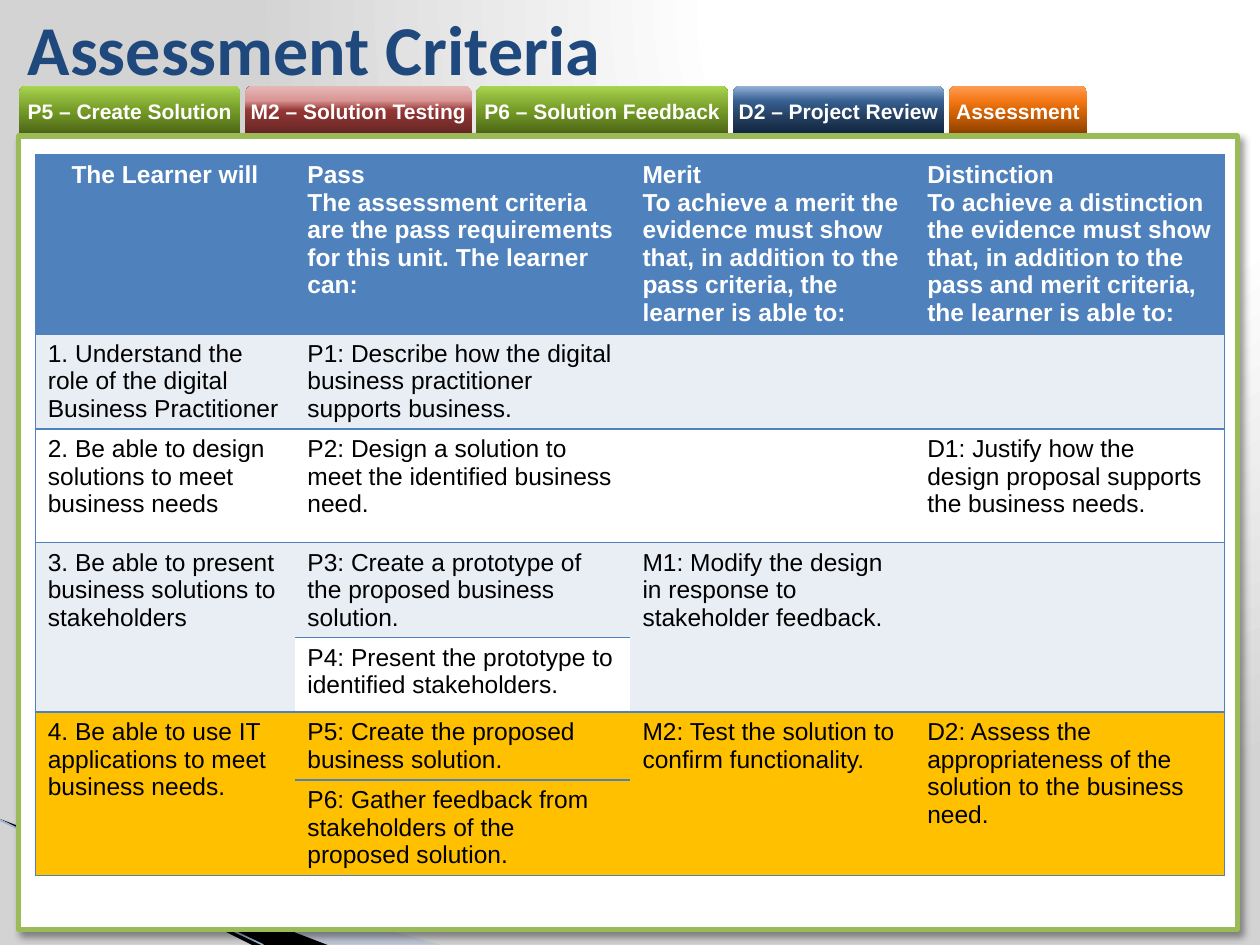
from dataclasses import dataclass

from lxml.etree import SubElement
from pptx import Presentation
from pptx.dml.color import RGBColor
from pptx.enum.shapes import MSO_CONNECTOR, MSO_SHAPE
from pptx.enum.text import MSO_ANCHOR, MSO_AUTO_SIZE, PP_ALIGN
from pptx.oxml.ns import qn
from pptx.util import Inches, Pt

UNIT = Inches(0.1)  # the slide is a grid of 100 columns by 75 rows
NO_STYLE = "{2D5ABB26-0587-4C30-8999-92F81FD0307C}"


@dataclass(frozen=True)
class Theme:
    title_font: str = "Calibri"
    body_font: str = "Arial"
    title_size: float = 40
    tab_size: float = 12
    table_size: float = 14
    title: str = "1F497D"
    white: str = "FFFFFF"
    black: str = "000000"
    frame: str = "9BBB59"
    header: str = "4F81BD"
    band: str = "E9EDF4"
    current: str = "FFC000"
    ribbon: str = "A7B9DB"
    ribbon_line: str = "9EB3D6"
    backdrop: tuple = ((0, "FFFFFF"), (40, "FFFFFF"), (100, "D3D3D3"))
    green: tuple = ((0, "4A6316"), (50, "769C27"), (70, "89B137"), (100, "A9D651"))
    red: tuple = ((0, "632523"), (50, "953735"), (70, "D99694"), (100, "E6B9B8"))
    blue: tuple = ((0, "0F243E"), (38, "254061"), (69, "376092"), (100, "95B3D7"))
    orange: tuple = ((0, "8B3F00"), (50, "DA6606"), (70, "F47917"), (100, "FF9C54"))


def grid(*lengths):
    return [round(length * UNIT) for length in lengths]


def add_element(parent, tag, **attributes):
    return SubElement(parent, qn(tag), {key: str(value) for key, value in attributes.items()})


def add_color(parent, color, alpha=None):
    node = add_element(parent, "a:srgbClr", val=color)
    if alpha is not None:
        add_element(node, "a:alpha", val=alpha * 1000)


def write_text(frame, text, *, font, size, color, bold=False, align=PP_ALIGN.LEFT):
    """Fill a text frame; each line of the text is a paragraph."""
    frame.text = text
    for para in frame.paragraphs:
        para.alignment = align
        for span in para.runs:
            span.font.name, span.font.size, span.font.bold = font, Pt(size), bold
            span.font.color.rgb = RGBColor.from_string(color)


def set_gradient(fill, owner, stops, center=None):
    """Gradient running upwards, or circular around the given edges."""
    fill.gradient()
    node = next(owner.iter(qn("a:gradFill")))
    for child in list(node):
        node.remove(child)
    stop_list = add_element(node, "a:gsLst")
    for place, color in stops:
        add_color(add_element(stop_list, "a:gs", pos=place * 1000), color)
    if center:
        circle = add_element(node, "a:path", path="circle")
        add_element(circle, "a:fillToRect", **{edge: share * 1000 for edge, share in center.items()})
    else:
        add_element(node, "a:lin", ang=270 * 60000, scaled=0)


class Slide:
    def __init__(self, deck, theme):
        self.theme = theme
        self.page = deck.slides.add_slide(deck.slide_layouts[5])
        self.shapes = self.page.shapes

    def background(self, stops, **center):
        set_gradient(self.page.background.fill, self.page.element, stops, center)

    def title(self, text, *area):
        box = self.shapes.title
        box.left, box.top, box.width, box.height = grid(*area)
        box.text_frame.auto_size = MSO_AUTO_SIZE.NONE
        box.text_frame.vertical_anchor = MSO_ANCHOR.MIDDLE
        write_text(box.text_frame, text, font=self.theme.title_font,
                   size=self.theme.title_size, color=self.theme.title, bold=True)

    def ribbon(self, points, color, alpha=None):
        start, *rest = points
        builder = self.shapes.build_freeform(*start, scale=UNIT)
        builder.add_line_segments(rest, close=True)
        shape = builder.convert_to_shape()
        shape.shadow.inherit = False
        shape.line.fill.background()
        shape.fill.solid()
        shape.fill.fore_color.rgb = RGBColor.from_string(color)
        if alpha is not None:
            add_element(next(shape.element.iter(qn("a:srgbClr"))), "a:alpha", val=alpha * 1000)

    def line(self, ends, color, width):
        line = self.shapes.add_connector(MSO_CONNECTOR.STRAIGHT, *grid(*ends))
        line.line.color.rgb = RGBColor.from_string(color)
        line.line.width = Pt(width)
        add_element(line.element.spPr, "a:effectLst")

    def tab(self, text, stops, *area):
        box = self.shapes.add_shape(MSO_SHAPE.ROUND_2_SAME_RECTANGLE, *grid(*area))
        box.shadow.inherit = False
        box.line.fill.background()
        set_gradient(box.fill, box.element.spPr, stops)
        frame = box.text_frame
        frame.margin_left = frame.margin_right = frame.margin_top = frame.margin_bottom = 0
        frame.vertical_anchor = MSO_ANCHOR.MIDDLE
        write_text(frame, text, font=self.theme.body_font, size=self.theme.tab_size,
                   color=self.theme.white, bold=True, align=PP_ALIGN.CENTER)

    def panel(self, *area):
        box = self.shapes.add_shape(MSO_SHAPE.RECTANGLE, *grid(*area))
        box.fill.solid()
        box.fill.fore_color.rgb = RGBColor.from_string(self.theme.white)
        box.line.color.rgb = RGBColor.from_string(self.theme.frame)
        box.line.width = Pt(3)
        box.shadow.inherit = False
        effects = box.element.spPr.find(qn("a:effectLst"))
        shadow = add_element(effects, "a:outerShdw", blurRad=Pt(4), dist=Pt(3),
                             dir=45 * 60000, algn="tl", rotWithShape=0)
        add_color(shadow, self.theme.black, 40)

    def table(self, left, top, columns, heights, rows, fills, merges):
        theme = self.theme
        area = grid(left, top, sum(columns), sum(heights))
        table = self.shapes.add_table(len(rows), len(columns), *area).table
        next(table._tbl.iter(qn("a:tableStyleId"))).text = NO_STYLE
        table.first_row = table.horz_banding = False
        for column, width in zip(table.columns, grid(*columns)):
            column.width = width
        for row, height in zip(table.rows, grid(*heights)):
            row.height = height
        for first, last, column in merges:
            table.cell(first, column).merge(table.cell(last, column))
        for r, row in enumerate(rows):
            for c, text in enumerate(row):
                cell = table.cell(r, c)
                sides = ["a:lnL"] * (c == 0) + ["a:lnR"] * (c == len(columns) - 1)
                sides += ["a:lnT"] * (not cell.is_spanned) + ["a:lnB"]
                for side in sides:
                    border = add_element(cell._tc.get_or_add_tcPr(), side, w=Pt(1))
                    add_color(add_element(border, "a:solidFill"), theme.header)
                cell.fill.solid()
                cell.fill.fore_color.rgb = RGBColor.from_string(
                    theme.white if (r, c) == (4, 1) else fills[r])
                if text:
                    write_text(cell.text_frame, text, font=theme.body_font, size=theme.table_size,
                               color=theme.black if r else theme.white, bold=r == 0,
                               align=PP_ALIGN.LEFT if r or c else PP_ALIGN.CENTER)


def main():
    theme = Theme()
    deck = Presentation()
    deck.slide_width, deck.slide_height = grid(100, 75)
    slide = Slide(deck, theme)

    # Backdrop with ribbons in the bottom left corner
    slide.background(theme.backdrop, l=65, t=0, r=0, b=98)
    slide.ribbon([(0, 65), (34.9, 75), (25.9, 75), (0, 64.9)], theme.ribbon, 40)
    slide.ribbon([(0, 64.8), (25.6, 74.9), (20.2, 75), (0.1, 64.9)], theme.black)
    slide.line((0, 65.1, 20.9, 75), theme.ribbon_line, 0.95)

    # Section tabs, set side by side with an equal gap
    tabs = [("Assessment", 11, theme.orange)]
    tabs = [
        ("P5 – Create Solution", 17.6, theme.green),
        ("M2 – Solution Testing", 18, theme.red),
        ("P6 – Solution Feedback", 20, theme.green),
        ("D2 – Project Review", 16.8, theme.blue),
    ] + tabs
    left = 1.5
    for text, width, stops in tabs:
        slide.tab(text, stops, left, 6.8, width, 3.9)
        left += width + 0.35

    slide.panel(1.5, 10.8, 96.7, 63)
    slide.title("Assessment Criteria", 1.2, 0, 84.3, 7.6)

    # Criteria by learning outcome and grade
    rows = [
        ("The Learner will",
         "Pass\nThe assessment criteria are the pass requirements for this unit. The learner can:",
         "Merit\nTo achieve a merit the evidence must show that, in addition to the pass criteria, "
         "the learner is able to:",
         "Distinction\nTo achieve a distinction the evidence must show that, in addition to the "
         "pass and merit criteria, the learner is able to:"),
        ("1. Understand the role of the digital\nBusiness Practitioner",
         "P1: Describe how the digital business practitioner supports business.", "", ""),
        ("2. Be able to design solutions to meet business needs",
         "P2: Design a solution to meet the identified business need.", "",
         "D1: Justify how the design proposal supports the business needs."),
        ("3. Be able to present\nbusiness solutions to\nstakeholders",
         "P3: Create a prototype of the proposed business solution.",
         "M1: Modify the design in response to stakeholder feedback.", ""),
        ("", "P4: Present the prototype to identified stakeholders.", "", ""),
        ("4. Be able to use IT\napplications to meet\nbusiness needs.",
         "P5: Create the proposed business solution.",
         "M2: Test the solution to confirm functionality.",
         "D2: Assess the appropriateness of the\nsolution to the business need."),
        ("", "P6: Gather feedback from stakeholders of the proposed solution.", "", ""),
    ]
    fills = [theme.header, theme.band, theme.white, theme.band, theme.band,
             theme.current, theme.current]
    merges = [(first, first + 1, column) for first in (3, 5) for column in (0, 2, 3)]
    slide.table(2.8, 12.3, (20.6, 26.6, 22.6, 24.6), (14.2, 7.5, 9, 7.5, 5.9, 5.4, 7.5),
                rows, fills, merges)

    deck.save("out.pptx")


if __name__ == "__main__":
    main()
